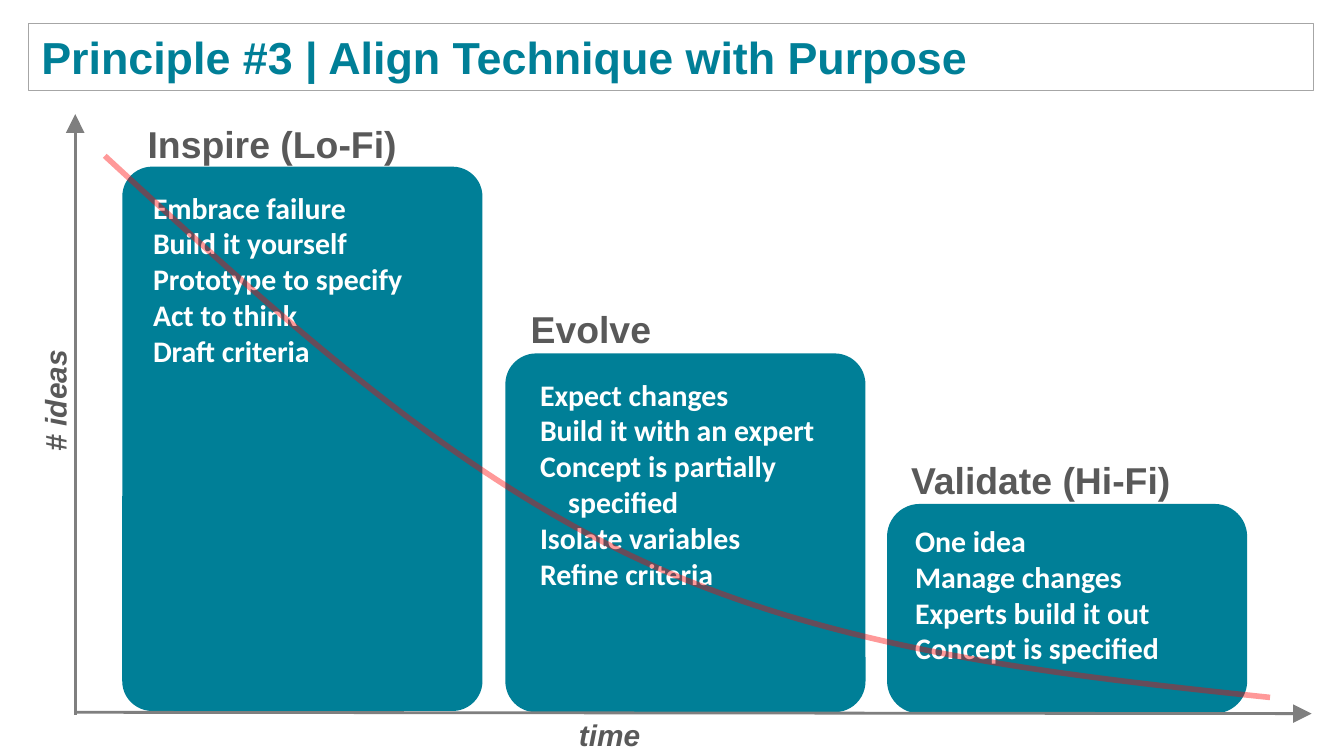
from typing import NamedTuple

from lxml import etree
from pptx import Presentation
from pptx import util as u
from pptx.dml.color import RGBColor
from pptx.enum import shapes, text
from pptx.oxml.ns import qn

COLORS = {
    "teal": "007F97",
    "white": "FFFFFF",
    "label": "595959",
    "axis": "7F7F7F",
    "border": "A6A6A6",
    "curve": "FF0000",
}


class Box(NamedTuple):
    left: float
    top: float
    width: float
    height: float


class Point(NamedTuple):
    x: float
    y: float


class Phase(NamedTuple):
    heading: str
    heading_box: Box
    card: Box
    corner: float
    list_box: Box
    items: list[str]


PHASES = [
    Phase("Inspire (Lo-Fi)", Box(1, 0.85, 2.09, 0.4),
          Box(0.91, 1.24, 2.68, 4.05), 0.083, Box(1.04, 1.36, 2.42, 1.73),
          ["Embrace failure", "Build it yourself", "Prototype to specify",
           "Act to think", "Draft criteria"]),
    Phase("Evolve", Box(3.85, 2.23, 1.8, 0.4),
          Box(3.76, 2.63, 2.68, 2.67), 0.086, Box(3.92, 2.75, 2.3, 1.59),
          ["Expect changes", "Build it with an expert",
           "Concept is partially\nspecified", "Isolate variables",
           "Refine criteria"]),
    Phase("Validate (Hi-Fi)", Box(6.68, 3.35, 2.68, 0.42),
          Box(6.6, 3.75, 2.68, 1.56), 0.156, Box(6.71, 3.84, 2.32, 1.44),
          ["One idea", "Manage changes", "Experts build it out",
           "Concept is specified"]),
]

CURVE = [
    Point(0.78, 1.16),
    Point(2.05, 2.33), Point(3.32, 3.5), Point(4.77, 4.17),
    Point(6.21, 4.84), Point(7.83, 5.02), Point(9.45, 5.19),
]


def rgb(name: str) -> RGBColor:
    return RGBColor.from_string(COLORS[name])


def emu(values: tuple) -> list:
    return [u.Inches(v) for v in values]


def set_alpha(fill, percent: int) -> None:
    color = fill._xPr.find(qn("a:solidFill"))[0]
    etree.SubElement(color, qn("a:alpha"), val=str(percent * 1000))


def write(tf, lines: list[str], size: int, font: str, color: str,
          italic: bool = False) -> None:
    tf.word_wrap = True
    for i, line in enumerate(lines):
        p = tf.paragraphs[0] if i == 0 else tf.add_paragraph()
        p.alignment = text.PP_ALIGN.LEFT
        parts = line.split("\n")
        if len(parts) > 1:
            p._p.get_or_add_pPr().set("marL", str(u.Inches(0.21)))
            p._p.get_or_add_pPr().set("indent", str(u.Inches(-0.21)))
        for j, part in enumerate(parts):
            if j:
                p.add_line_break()
            r = p.add_run()
            r.text = part
            r.font.size = u.Pt(size)
            r.font.name = font
            r.font.bold = True
            r.font.italic = italic
            r.font.color.rgb = rgb(color)


def add_label(parent, box: Box, lines: list[str], size: int, font: str,
              color: str, italic: bool = False, rotation: int = 0) -> None:
    sp = parent.add_textbox(*emu(box))
    sp.rotation = rotation
    write(sp.text_frame, lines, size, font, color, italic)


def add_block(parent, kind, box: Box, fill: str):
    sp = parent.add_shape(kind, *emu(box))
    sp.shadow.inherit = False
    sp.fill.solid()
    sp.fill.fore_color.rgb = rgb(fill)
    sp.line.fill.background()
    return sp


def add_phase(s, phase: Phase) -> None:
    group = s.shapes.add_group_shape().shapes
    card = add_block(group, shapes.MSO_SHAPE.ROUNDED_RECTANGLE, phase.card, "teal")
    card.adjustments[0] = phase.corner
    add_label(group, phase.heading_box, [phase.heading], 20, "Arial", "label")
    add_label(group, phase.list_box, phase.items, 16, "Calibri", "white")


def add_axis(s, tip: Point, origin: Point) -> None:
    axis = s.shapes.add_connector(shapes.MSO_CONNECTOR.STRAIGHT, *emu(tip + origin))
    axis.line.color.rgb = rgb("axis")
    axis.line.width = u.Pt(1.5)
    etree.SubElement(axis.line._get_or_add_ln(), qn("a:headEnd"),
                     type="triangle", w="lg", len="lg")
    etree.SubElement(axis._element.spPr, qn("a:effectLst"))


def add_curve(s, points: list[Point]) -> None:
    start, *rest = [tuple(emu(point)) for point in points]
    builder = s.shapes.build_freeform(*start)
    builder.add_line_segments(rest, close=False)
    sp = builder.convert_to_shape()
    segments = list(sp._element.iter(qn("a:lnTo")))
    outline = segments[0].getparent()
    for i in range(0, len(segments), 3):
        bezier = etree.SubElement(outline, qn("a:cubicBezTo"))
        for segment in segments[i:i + 3]:
            bezier.append(segment[0])
            outline.remove(segment)
    sp.shadow.inherit = False
    sp.fill.background()
    sp.line.color.rgb = rgb("curve")
    sp.line.width = u.Pt(3)
    set_alpha(sp.line.fill, 40)


def add_title(s, title: str) -> None:
    sp = add_block(s.shapes, shapes.MSO_SHAPE.RECTANGLE,
                   Box(0.21, 0.17, 9.56, 0.5), "white")
    set_alpha(sp.fill, 70)
    sp.line.color.rgb = rgb("border")
    sp.line.width = u.Pt(0.25)
    sp.text_frame.vertical_anchor = text.MSO_ANCHOR.MIDDLE
    write(sp.text_frame, [title], 24, "Arial", "teal")


def main() -> None:
    prs = Presentation()
    prs.slide_width = u.Inches(10)
    prs.slide_height = u.Inches(10 * 9 / 16)
    s = prs.slides.add_slide(prs.slide_layouts[6])
    add_label(s.shapes, Box(4.21, 5.28, 0.77, 0.34), ["time"], 16, "Arial",
              "label", italic=True)
    add_label(s.shapes, Box(-0.1, 2.8, 0.98, 0.33), ["# ideas"], 16, "Arial",
              "label", italic=True, rotation=270)
    for phase in PHASES:
        add_phase(s, phase)
    add_axis(s, Point(0.56, 0.85), Point(0.56, 5.32))
    add_axis(s, Point(9.76, 5.31), Point(0.56, 5.3))
    add_curve(s, CURVE)
    add_title(s, "Principle #3 | Align Technique with Purpose")
    prs.save("out.pptx")


if __name__ == "__main__":
    main()
